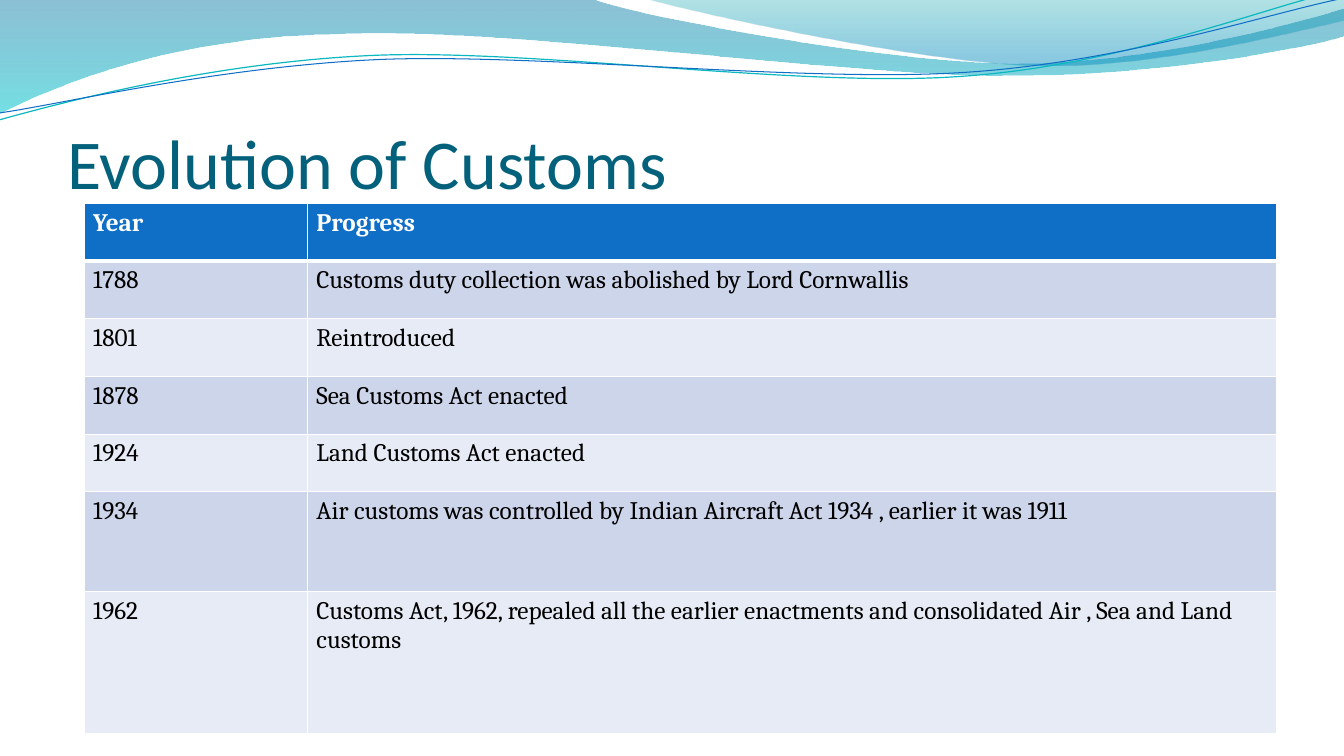
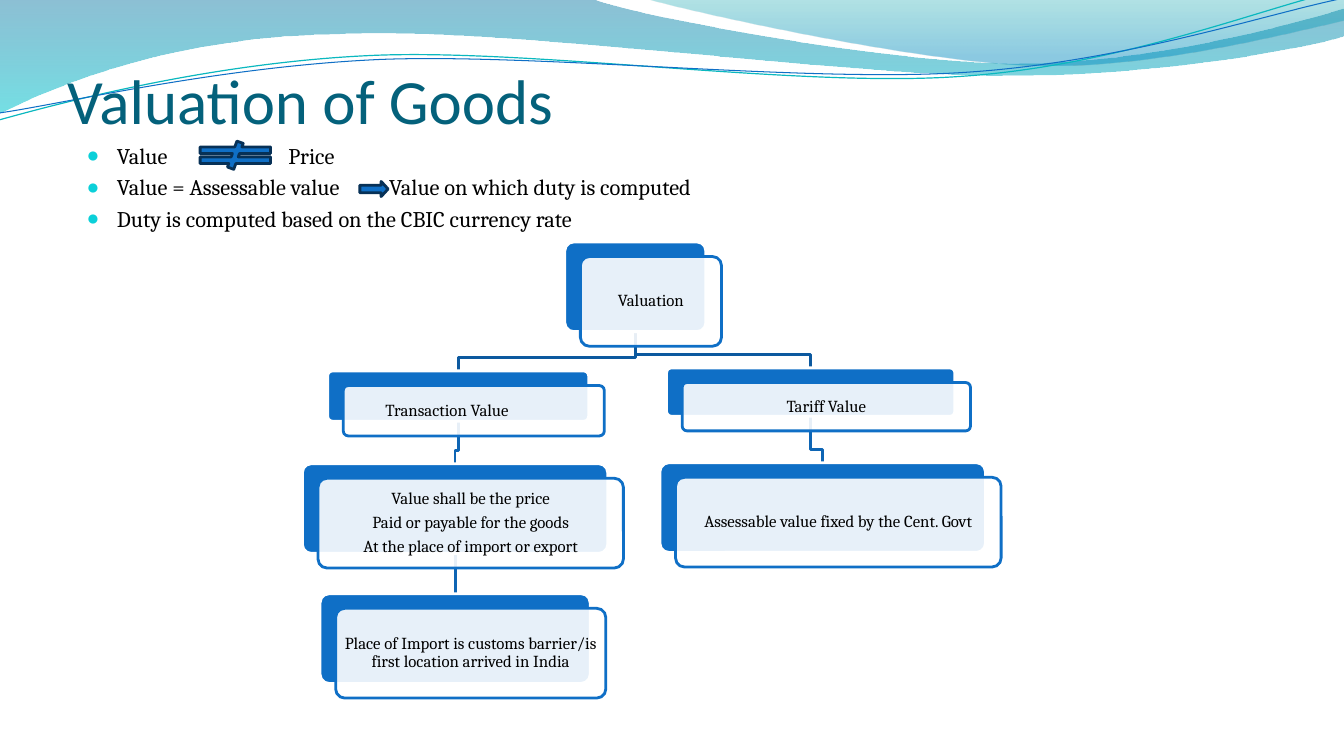
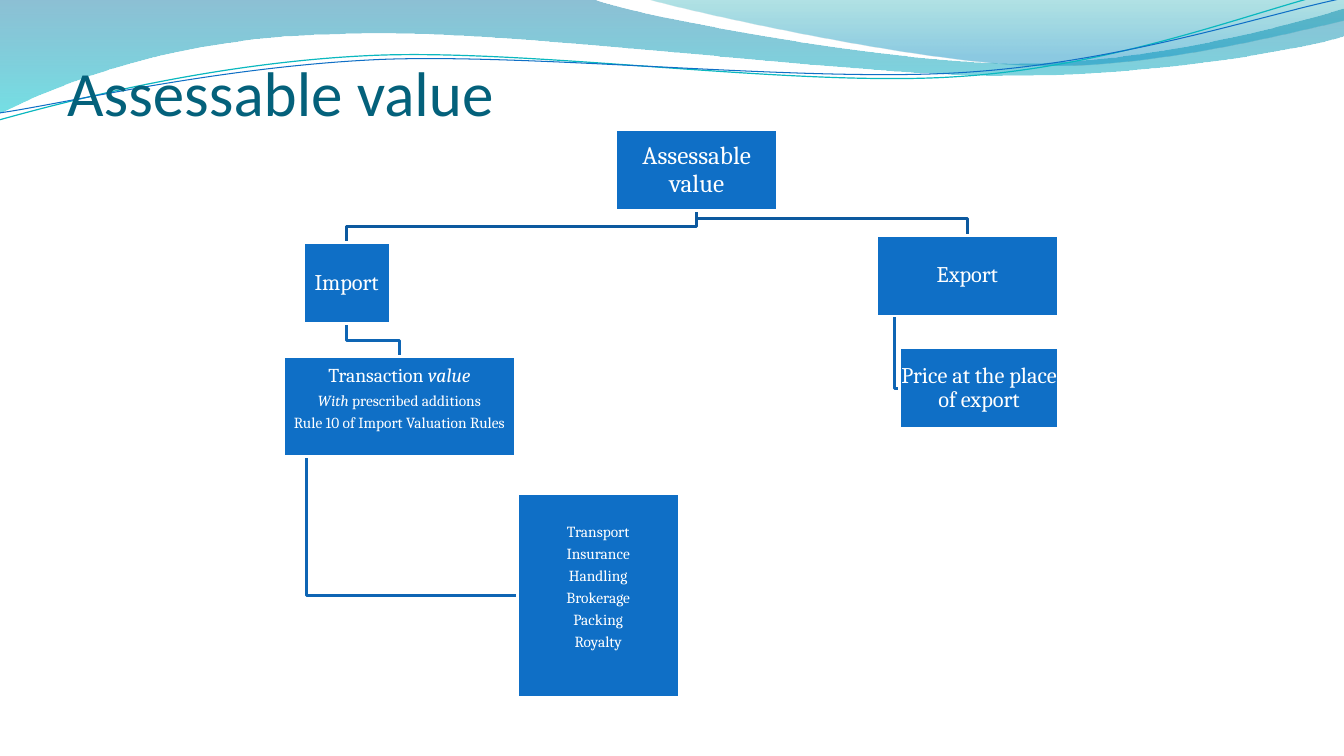
"""Build three slides on customs history, valuation of goods and assessable value."""
from lxml import etree
from pptx import Presentation
from pptx.dml.color import RGBColor
from pptx.enum.shapes import MSO_CONNECTOR, MSO_SHAPE
from pptx.enum.text import MSO_ANCHOR, MSO_AUTO_SIZE, PP_ALIGN
from pptx.oxml.ns import qn
from pptx.util import Inches, Pt

LEFT, CENTER = PP_ALIGN.LEFT, PP_ALIGN.CENTER
BOTTOM, MIDDLE = MSO_ANCHOR.BOTTOM, MSO_ANCHOR.MIDDLE
FIXED = MSO_AUTO_SIZE.NONE
STRAIGHT = MSO_CONNECTOR.STRAIGHT
RECTANGLE, ROUNDED = MSO_SHAPE.RECTANGLE, MSO_SHAPE.ROUNDED_RECTANGLE
NOT_EQUAL, RIGHT_ARROW = MSO_SHAPE.MATH_NOT_EQUAL, MSO_SHAPE.RIGHT_ARROW

CELL = Inches(0.1)
COLUMNS, ROWS = 133.33, 75
COLORS = {
    "blue": "0F6FC6", "navy": "073157", "title": "04617B", "bullet": "0BD0D9",
    "white": "FFFFFF", "black": "000000", "trunk": "0C599F", "branch": "0E65B4",
    "band": "CCD5EA", "pale": "E7EBF5", "teal": "0AB8BF",
    "wave_top": "0074A1", "wave_end": "00C6CF", "crest_top": "00A1A9", "crest_end": "008BBF",
}
RGB = {name: RGBColor.from_string(value) for name, value in COLORS.items()}


def outline(page, route, color, weight, close=False):
    """Draw a line through steps in grid cells; a step of six numbers is a cubic curve."""
    points = [(round(step[at] * CELL), round(step[at + 1] * CELL))
              for step in route for at in range(0, len(step), 2)]
    builder = page.shapes.build_freeform(*points[0])
    builder.add_line_segments(points[1:], close=close)
    shape = builder.convert_to_shape()
    segments = iter(list(shape.element.iter(qn("a:lnTo"))))
    for step in route[1:]:
        group = [next(segments) for _ in range(len(step) // 2)]
        if len(group) == 3:
            curve = etree.Element(qn("a:cubicBezTo"))
            group[0].addprevious(curve)
            for segment in group:
                curve.append(segment[0])
                segment.getparent().remove(segment)
    shape.shadow.inherit = False
    shape.fill.background()
    shape.line.color.rgb = RGB[color]
    shape.line.width = Pt(weight)
    return shape


def write(frame, lines, size, color, align=LEFT, font="Cambria", tight=False):
    """Fill a text frame; words between asterisks are italic."""
    frame.word_wrap = True
    frame.text = "\n".join(lines)
    for para, line in zip(frame.paragraphs, lines):
        para.text = ""
        para.alignment = align
        if tight:
            para.line_spacing = 0.9
            para.space_before = Pt(0)
            para.space_after = Pt(size * 0.35)
        for index, part in enumerate(line.split("*")):
            if part:
                span = para.add_run()
                span.text = part
                span.font.name = font
                span.font.size = Pt(size)
                span.font.color.rgb = RGB[color]
                span.font.italic = index % 2 == 1


deck = Presentation()
deck.slide_width, deck.slide_height = round(COLUMNS * CELL), ROWS * CELL

pages = []
for layout, heading, height, size in (
    (5, "Evolution of Customs", 12.5, 50),
    (1, "Valuation of Goods", 5.9, 45),
    (5, "Assessable value", 5.1, 45),
):
    page = deck.slides.add_slide(deck.slide_layouts[layout])
    title = page.shapes.title
    title.left, title.top = round(COLUMNS * 0.05 * CELL), round(7.7 * CELL)
    title.width, title.height = round(COLUMNS * 0.9 * CELL), round(height * CELL)
    frame = title.text_frame
    write(frame, [heading], size, "title", font="Calibri")
    frame.auto_size = FIXED
    frame.vertical_anchor = BOTTOM
    frame.margin_left = frame.margin_right = frame.margin_bottom = 0
    pages.append(page)
history, valuation, assessable = pages

waves = [
    ([(0, 0), (58.7, -0.1), (63.4, 1.7, 88.5, 6.3, 101.1, 6.3), (113.8, 6.3, 127.8, 2.6, 133.3, 0.9),
      (133.5, 3.6), (131.1, 4.4, 116, 7.6, 99.4, 7.5), (82.9, 7.5, 50.9, 2.8, 34.3, 3.4),
      (17.2, 3.6, 6.1, 8.3, -0.1, 11.3), (0, 0)],
     "blue", 0, [("wave_top", 0, 45), ("wave_end", 1, 55)]),
    ([(63.9, -0.1), (67.9, 1.1, 90.9, 6.2, 102.5, 6.5), (114.1, 6.9, 128.2, 3.2, 133.3, 2.1),
      (133.3, 0), (63.9, -0.1)],
     "blue", 0, [("crest_top", 0, 30), ("crest_end", 0.8, 45)]),
    ([(-0.1, 11.9), (6.4, 10.1, 21.1, 6.2, 36.9, 5.5), (52.7, 4.8, 79, 8.7, 95, 7.6),
      (111, 6.6, 125.2, 0.8, 133.1, -1)], "teal", 0.85, []),
    ([(0, 11.2), (6.3, 10.3, 21.8, 6.6, 37.8, 5.9), (53.7, 5.3, 79.6, 8.2, 95.5, 7.2),
      (111.5, 6.2, 125.5, 1.4, 133.4, -0.2)], "blue", 0.75, []),
]
for order, (route, color, weight, stops) in enumerate(waves):
    wave = outline(history, route, color, weight, bool(stops))
    if stops:
        wave.line.fill.background()
        wave.fill.gradient()
        wave.fill.gradient_angle = 270
        for stop, (name, position, _) in zip(wave.fill.gradient_stops, stops):
            stop.color.rgb = RGB[name]
            stop.position = position
        for tint, (_, _, opacity) in zip(wave.element.iter(qn("a:srgbClr")), stops):
            etree.SubElement(tint, qn("a:alpha"), val=str(opacity * 1000))
    wave.element.nvSpPr.cNvPr.set("id", str(100 + order))
    deck.slide_master.shapes.element.insert(2 + order, wave.element)

records = [
    ("Year", "Progress"),
    ("1788", "Customs duty collection was abolished by Lord Cornwallis"),
    ("1801", "Reintroduced"),
    ("1878", "Sea Customs Act enacted"),
    ("1924", "Land Customs Act enacted"),
    ("1934", "Air customs was controlled by Indian Aircraft Act 1934 , earlier it was 1911"),
    ("1962", "Customs Act, 1962, repealed all the earlier enactments and consolidated Air , "
             "Sea and Land customs"),
]
row_heights = [5.72] * 5 + [9.9, 14.1]
column_widths = [22.15, 96.1]
place = [round(v * CELL) for v in (8.35, 20.2, sum(column_widths), sum(row_heights))]
table = history.shapes.add_table(len(records), 2, *place).table
for column, width in zip(table.columns, column_widths):
    column.width = round(width * CELL)
for number, (row, record, height) in enumerate(zip(table.rows, records, row_heights)):
    row.height = round(height * CELL)
    for cell, text in zip(row.cells, record):
        write(cell.text_frame, [text], 18, "black" if number else "white")
        cell.margin_left = cell.margin_right = round(0.9 * CELL)
        cell.text_frame.paragraphs[0].runs[0].font.bold = number == 0
        properties = cell._tc.get_or_add_tcPr()
        for side in ("lnL", "lnR", "lnT", "lnB"):
            heavy = (number, side) in ((0, "lnB"), (1, "lnT"))
            border = etree.SubElement(properties, qn("a:" + side), w=str(Pt(3 if heavy else 1)))
            solid = etree.SubElement(border, qn("a:solidFill"))
            etree.SubElement(solid, qn("a:srgbClr"), val=COLORS["white"])
        cell.fill.solid()
        cell.fill.fore_color.rgb = RGB["blue" if number == 0 else "band" if number % 2 else "pale"]

body = valuation.placeholders[1]
body.left, body.top, body.width, body.height = [round(v * CELL) for v in (7.6, 13.6, 120, 57.1)]
write(body.text_frame, [
    "Value\tPrice",
    "Value = Assessable value\tValue on which duty is computed",
    "Duty is computed based on the CBIC currency rate",
], 16, "black")
body.text_frame.auto_size = FIXED
for number, (para, tab) in enumerate(zip(body.text_frame.paragraphs, (20, 30, 40))):
    para.space_before = Pt(3.2 if number else 0)
    properties = para._p.get_or_add_pPr()
    properties.set("marL", str(3 * CELL))
    properties.set("indent", str(-3 * CELL))
    tint = etree.SubElement(properties, qn("a:buClr"))
    etree.SubElement(tint, qn("a:srgbClr"), val=COLORS["bullet"])
    etree.SubElement(properties, qn("a:buSzPct"), val="95000")
    etree.SubElement(properties, qn("a:buChar"), char="●")
    tabs = etree.SubElement(properties, qn("a:tabLst"))
    etree.SubElement(tabs, qn("a:tab"), pos=str(tab * CELL), algn="l")

for kind, place in ((NOT_EQUAL, (18.6, 14, 9.5, 2.8)), (RIGHT_ARROW, (35.7, 18, 2.8, 1.5))):
    sign = valuation.shapes.add_shape(kind, *[round(v * CELL) for v in place])
    sign.shadow.inherit = False
    sign.fill.solid()
    sign.fill.fore_color.rgb = RGB["blue"]
    sign.line.color.rgb = RGB["navy"]
    sign.line.width = Pt(2)
sign.adjustments[1] = 0.457

cards = {
    "valuation": ((56.03, 24, 14, 8.9), ["Valuation"]),
    "transaction": ((32.5, 36.8, 25.9, 5), ["Transaction Value"]),
    "price": ((30, 46, 30.3, 8.9), ["Value shall be the price", "Paid or payable for the goods",
                                    "At the place of import or export"]),
    "place": ((31.75, 58.9, 26.8, 8.9),
              ["Place of Import is customs barrier/is first location arrived in India"]),
    "tariff": ((66.13, 36.5, 28.6, 4.8), ["Tariff Value"]),
    "fixed": ((65.47, 45.9, 32.3, 8.9), ["Assessable value fixed by the Cent. Govt"]),
}
boxes = {
    "assessable": ((61.07, 12.9, 16.1, 8), 18, ["Assessable value"]),
    "import": ((30.1, 24.1, 8.6, 8), 16, ["Import"]),
    "transaction": ((28.13, 35.4, 23, 9.9), 11, ["Transaction *value*", "*With *prescribed additions",
                                                "Rule 10 of Import Valuation Rules"]),
    "additions": ((51.3, 48.97, 16.1, 20.2), 11, ["Transport", "Insurance", "Handling",
                                                 "Brokerage", "Packing", "Royalty"]),
    "export": ((86.97, 23.36, 18, 8), 16, ["Export"]),
    "export price": ((89.23, 34.53, 15.8, 8), 16, ["Price at the place of export"]),
}

trees = [
    (valuation, cards, 1.3, [("valuation", "transaction", "trunk"), ("valuation", "tariff", "trunk"),
                             ("transaction", "price", "branch"), ("tariff", "fixed", "branch")]),
    (assessable, boxes, 1.65, [("assessable", "import", "trunk"), ("assessable", "export", "trunk"),
                               ("import", "transaction", "branch")]),
]
for page, nodes, drop, links in trees:
    for parent, child, color in links:
        x, y, width, height = nodes[parent][0]
        child_x, child_y, child_width, _ = nodes[child][0]
        start, end = x + width / 2, child_x + child_width / 2
        bend = child_y - drop
        outline(page, [(start, y + height), (start, bend), (end, bend), (end, child_y)], color, 2)

for parent, child in (("transaction", "additions"), ("export", "export price")):
    x, y, width, height = boxes[parent][0]
    child_x, child_y, _, child_height = boxes[child][0]
    stem, level = x + width * 0.1, child_y + child_height / 2
    outline(assessable, [(stem, y + height), (stem, level), (child_x, level)], "branch", 2)

backs = {}
for name, ((x, y, width, height), lines) in cards.items():
    for right, down, fill, edge in ((0, 0, "blue", "white"), (1.55, 1.45, "white", "blue")):
        place = [round(v * CELL) for v in (x + right, y + down, width, height)]
        card = valuation.shapes.add_shape(ROUNDED, *place)
        card.adjustments[0] = 0.1
        card.shadow.inherit = False
        card.fill.solid()
        card.fill.fore_color.rgb = RGB[fill]
        card.line.color.rgb = RGB[edge]
        card.line.width = Pt(2)
        backs.setdefault(name, card)
    tint = next(card.element.iter(qn("a:srgbClr")))
    etree.SubElement(tint, qn("a:alpha"), val="90000")
    frame = card.text_frame
    write(frame, lines, 12, "black", CENTER, tight=True)
    frame.vertical_anchor = MIDDLE
    frame.margin_left = frame.margin_right = frame.margin_top = frame.margin_bottom = CELL // 2
    if name == "transaction":
        frame.margin_right = round(5.8 * CELL)

link = valuation.shapes.add_connector(STRAIGHT, 0, 0, 0, 0)
link.begin_connect(backs["price"], 2)
link.end_connect(backs["place"], 0)
link.line.color.rgb = RGB["branch"]
link.line.width = Pt(2)
etree.SubElement(link.element.spPr, qn("a:effectLst"))
valuation.shapes.element.insert(2, link.element)

for name, (place, size, lines) in boxes.items():
    box = assessable.shapes.add_shape(RECTANGLE, *[round(v * CELL) for v in place])
    box.shadow.inherit = False
    box.fill.solid()
    box.fill.fore_color.rgb = RGB["blue"]
    box.line.color.rgb = RGB["white"]
    box.line.width = Pt(2)
    frame = box.text_frame
    write(frame, lines, size, "white", CENTER, tight=True)
    frame.vertical_anchor = MIDDLE
    frame.margin_left = frame.margin_right = frame.margin_top = frame.margin_bottom = CELL // 10
    if len(lines) > 1:
        frame.margin_bottom = round(1.7 * CELL)
    if name == "transaction":
        frame.paragraphs[0].space_after = Pt(4.9)
        for span in frame.paragraphs[0].runs:
            span.font.size = Pt(14)

deck.save("out.pptx")
